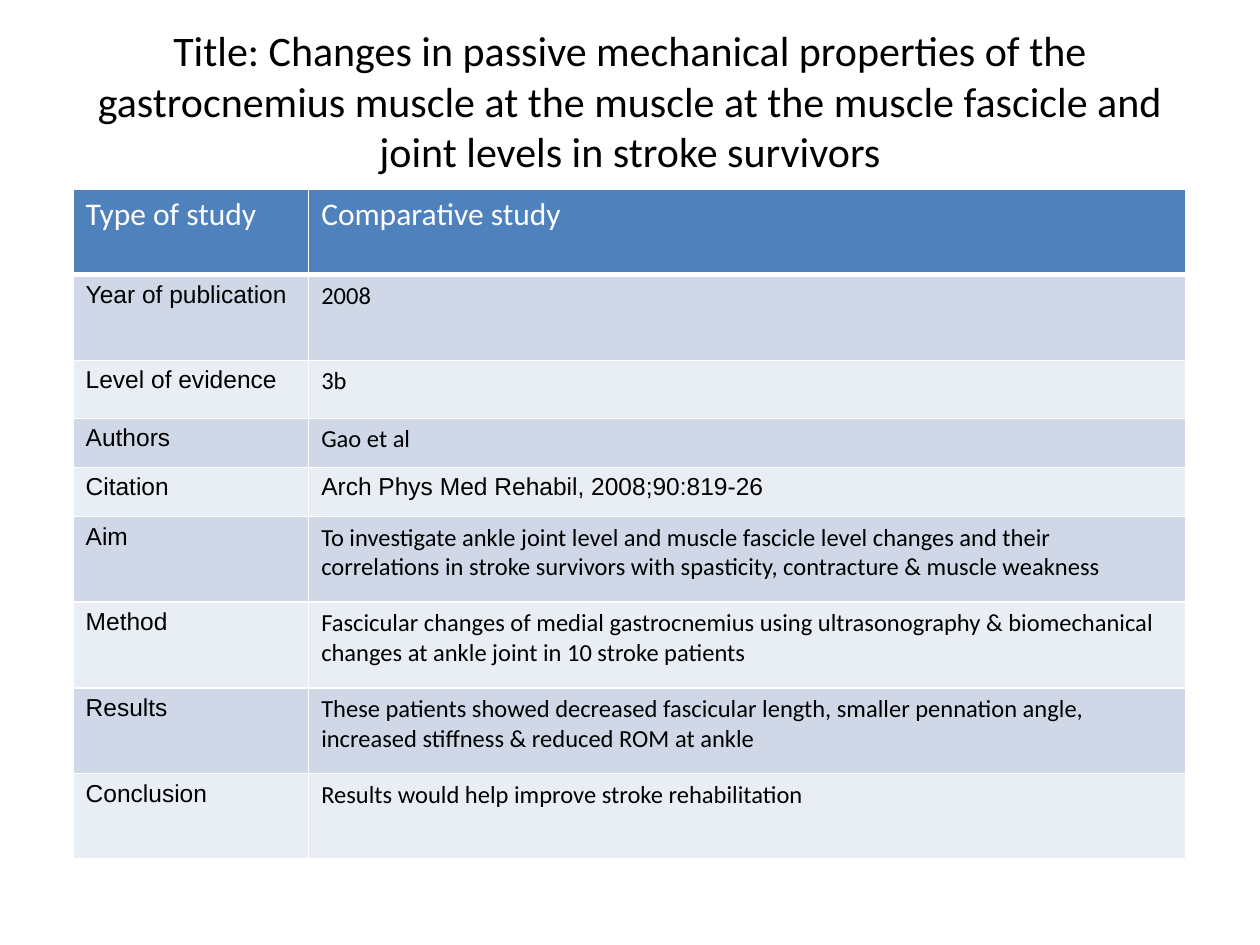
from lxml import etree
from pptx import Presentation
from pptx.dml.color import RGBColor
from pptx.enum.text import MSO_ANCHOR, PP_ALIGN
from pptx.oxml.ns import qn
from pptx.util import Inches, Pt

MIDDLE = MSO_ANCHOR.MIDDLE
CENTER = PP_ALIGN.CENTER

COLORS = {
    "text": "000000",
    "header": "4F81BD",
    "header_text": "FFFFFF",
    "band_dark": "D0D8E8",
    "band_light": "E9EDF4",
    "border": "FFFFFF",
}
HEADING = (
    "Title: Changes in passive mechanical properties of the gastrocnemius "
    "muscle at the muscle at the muscle fascicle and joint levels in stroke survivors"
)
COLUMN_WIDTHS = (1.87, 6.96)
# label, detail, row height in inches
STUDY_ROWS = [
    ("Type of study", "Comparative study", 0.68),
    ("Year of publication", "2008", 0.68),
    ("Level of evidence", "3b", 0.46),
    ("Authors", "Gao et al", 0.39),
    ("Citation", "Arch Phys Med Rehabil, 2008;90:819-26", 0.39),
    ("Aim", "To investigate ankle joint level and muscle fascicle level changes "
     "and their correlations in stroke survivors with spasticity, contracture "
     "& muscle weakness", 0.68),
    ("Method", "Fascicular changes of medial gastrocnemius using ultrasonography "
     "& biomechanical changes at ankle joint in 10 stroke patients", 0.68),
    ("Results", "These patients showed decreased fascicular length, smaller "
     "pennation angle, increased stiffness & reduced ROM at ankle", 0.68),
    ("Conclusion", "Results would help improve stroke rehabilitation", 0.68),
]


def rgb(name):
    return RGBColor.from_string(COLORS[name])


def format_text(paragraph, font_name, size, color):
    font = paragraph.runs[0].font
    font.name = font_name
    font.size = Pt(size)
    font.bold = False
    font.color.rgb = rgb(color)


def add_borders(cell, bottom_width):
    properties = cell._tc.get_or_add_tcPr()
    for side, width in (("L", 1), ("R", 1), ("T", 1), ("B", bottom_width)):
        line = etree.SubElement(properties, qn(f"a:ln{side}"), w=str(Pt(width)))
        fill = etree.SubElement(line, qn("a:solidFill"))
        etree.SubElement(fill, qn("a:srgbClr"), val=COLORS["border"])


def add_heading(slide, left, top, width, height):
    frame = slide.shapes.add_textbox(left, top, width, height).text_frame
    frame.word_wrap = True
    frame.vertical_anchor = MIDDLE
    frame.text = HEADING
    paragraph = frame.paragraphs[0]
    paragraph.alignment = CENTER
    format_text(paragraph, "Calibri", 24, "text")


def fill_cell(cell, text, row, column):
    is_header = row == 0
    add_borders(cell, 3 if is_header else 1)
    cell.fill.solid()
    cell.text = text
    paragraph = cell.text_frame.paragraphs[0]
    if is_header:
        cell.fill.fore_color.rgb = rgb("header")
        format_text(paragraph, "Calibri", 18, "header_text")
    else:
        cell.fill.fore_color.rgb = rgb("band_dark" if row % 2 else "band_light")
        is_arial = column == 0 or STUDY_ROWS[row][0] == "Citation"
        format_text(paragraph, "Arial" if is_arial else "Calibri", 14, "text")


def add_study_table(slide, left, top, width, height):
    table = slide.shapes.add_table(
        len(STUDY_ROWS), len(COLUMN_WIDTHS), left, top, width, height
    ).table
    for column, column_width in zip(table.columns, COLUMN_WIDTHS):
        column.width = Inches(column_width)
    for row, (label, detail, row_height) in enumerate(STUDY_ROWS):
        table.rows[row].height = Inches(row_height)
        for column, text in enumerate((label, detail)):
            fill_cell(table.cell(row, column), text, row, column)


def main():
    presentation = Presentation()
    presentation.slide_width = Inches(10)
    presentation.slide_height = Inches(7.5)
    slide = presentation.slides.add_slide(presentation.slide_layouts[6])
    add_heading(slide, Inches(0.5), Inches(0.17), Inches(9), Inches(1.25))
    add_study_table(slide, Inches(0.58), Inches(1.5), Inches(8.83), Inches(5.33))
    presentation.save("out.pptx")


if __name__ == "__main__":
    main()
